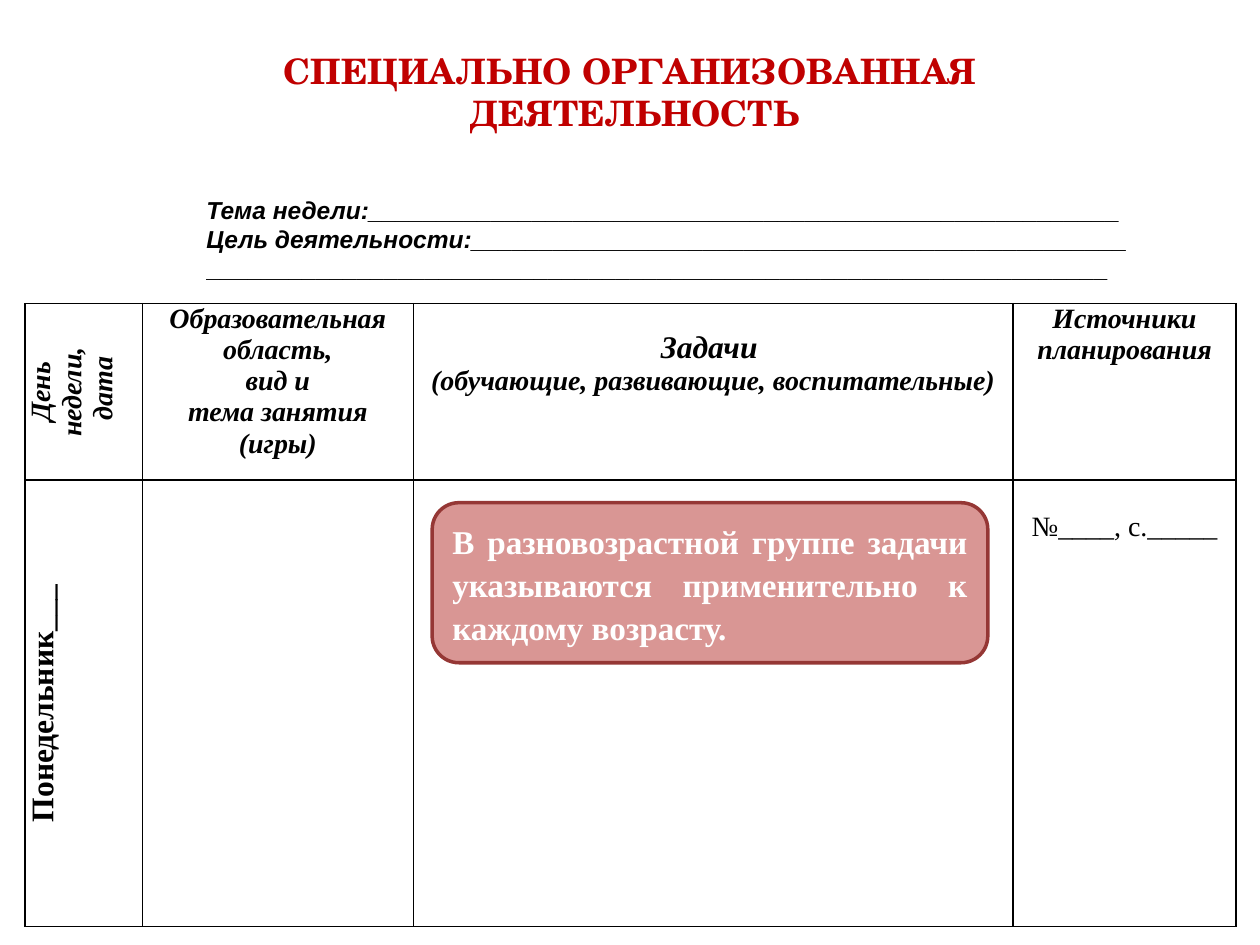
from dataclasses import dataclass

import pptx
import pptx.dml.color
import pptx.enum.shapes
import pptx.enum.text
import pptx.oxml
import pptx.oxml.ns
import pptx.util

Inches, Pt = pptx.util.Inches, pptx.util.Pt
RGBColor = pptx.dml.color.RGBColor
Align, Anchor = pptx.enum.text.PP_ALIGN, pptx.enum.text.MSO_ANCHOR

BLACK = RGBColor(0x00, 0x00, 0x00)
WHITE = RGBColor(0xFF, 0xFF, 0xFF)
RED = RGBColor(0xC0, 0x00, 0x00)
ROSE = RGBColor(0xD9, 0x96, 0x94)
MAROON = RGBColor(0x95, 0x37, 0x35)

SERIF = "Times New Roman"
COLUMNS = (0.93, 2.15, 4.76, 1.77)
ROWS = (1.4, 3.54)


@dataclass
class Line:
    text: str
    size: float = 16
    bold: bool = True
    italic: bool = True
    align: Align = Align.CENTER
    font: str = SERIF
    color: RGBColor = BLACK


@dataclass
class Cell:
    row: int
    column: int
    lines: list[Line]
    vertical: bool = False


CELLS = [
    Cell(0, 0, [Line("День недели,"), Line(" дата")], vertical=True),
    Cell(0, 1, [Line("Образовательная область,"), Line("вид и"),
                Line("тема занятия (игры)")]),
    Cell(0, 2, [Line("\u00a0", 14), Line("Задачи ", 18),
                Line("(обучающие, развивающие, воспитательные)")]),
    Cell(0, 3, [Line("Источники"), Line("планирования"), Line(" ", 14)]),
    Cell(1, 0, [Line("Понедельник___", 18, italic=False)], vertical=True),
    Cell(1, 3, [Line("\u00a0", bold=False, italic=False, align=Align.LEFT),
                Line("№____, с._____", bold=False, italic=False)]),
]

THEME_LINES = [
    Line("Тема недели:" + "_" * 55, 14, align=Align.LEFT, font="Arial"),
    Line("Цель деятельности:" + "_" * 48, 14, align=Align.LEFT, font="Arial"),
    Line("_" * 66, 14, italic=False, align=Align.LEFT, font="Arial"),
]


def write_lines(tf: pptx.text.text.TextFrame, lines: list[Line]) -> None:
    for i, line in enumerate(lines):
        p = tf.paragraphs[0] if i == 0 else tf.add_paragraph()
        p.text = line.text
        p.alignment = line.align
        for r in p.runs:
            style = {"size": Pt(line.size), "name": line.font,
                     "bold": line.bold, "italic": line.italic}
            for key, value in style.items():
                setattr(r.font, key, value)
            r.font.color.rgb = line.color


def place(sp, left: float, top: float, width: float, height: float) -> None:
    box = {"left": left, "top": top, "width": width, "height": height}
    for key, value in box.items():
        setattr(sp, key, Inches(value))


def add_borders(cell) -> None:
    """Draw 1 pt black lines on all sides, ahead of the cell's fill."""
    tc_pr = cell._tc.get_or_add_tcPr()
    for i, side in enumerate(("lnL", "lnR", "lnT", "lnB")):
        tc_pr.insert(i, pptx.oxml.parse_xml(
            f'<a:{side} {pptx.oxml.ns.nsdecls("a")} w="{Pt(1)}"><a:solidFill>'
            f'<a:srgbClr val="{BLACK}"/></a:solidFill></a:{side}>'))


def add_plan_table(slide) -> None:
    table = slide.shapes.add_table(
        len(ROWS), len(COLUMNS), Inches(0.2), Inches(2.41),
        Inches(sum(COLUMNS)), Inches(sum(ROWS))).table
    table.first_row = table.horz_banding = False
    for column, width in zip(table.columns, COLUMNS):
        column.width = Inches(width)
    for row, height in zip(table.rows, ROWS):
        row.height = Inches(height)
    margins = {"margin_left": 0.04, "margin_right": 0.04,
               "margin_top": 0, "margin_bottom": 0}
    for cell in table.iter_cells():
        for key, value in margins.items():
            setattr(cell, key, Inches(value))
        cell.fill.background()
        add_borders(cell)
    for item in CELLS:
        cell = table.cell(item.row, item.column)
        write_lines(cell.text_frame, item.lines)
        if item.vertical:
            cell.vertical_anchor = Anchor.MIDDLE
            cell._tc.get_or_add_tcPr().set("vert", "vert270")
            for p in cell.text_frame.paragraphs:
                for side in ("marL", "marR"):
                    p._p.get_or_add_pPr().set(side, str(Inches(0.08)))


def add_note(slide) -> None:
    sp = slide.shapes.add_shape(
        pptx.enum.shapes.MSO_SHAPE.ROUNDED_RECTANGLE,
        Inches(3.43), Inches(3.99), Inches(4.41), Inches(1.27))
    sp.shadow.inherit = False
    sp.fill.solid()
    sp.fill.fore_color.rgb = ROSE
    sp.line.color.rgb = MAROON
    sp.line.width = Pt(2)
    tf = sp.text_frame
    tf.word_wrap = True
    tf.vertical_anchor = Anchor.MIDDLE
    write_lines(tf, [Line(
        "В разновозрастной группе задачи указываются применительно "
        "к каждому возрасту.", 19, italic=False, align=Align.JUSTIFY,
        color=WHITE)])
    tf.paragraphs[0].line_spacing = 1.08


def main() -> None:
    prs = pptx.Presentation()
    prs.slide_width, prs.slide_height = Inches(10), Inches(7.5)
    slide = prs.slides.add_slide(prs.slide_layouts[5])

    title = slide.shapes.title
    place(title, 0.04, 0, 10, 1.11)
    title.text_frame.auto_size = pptx.enum.text.MSO_AUTO_SIZE.NONE
    title.text_frame.vertical_anchor = Anchor.BOTTOM
    write_lines(title.text_frame, [Line(
        "СПЕЦИАЛЬНО ОРГАНИЗОВАННАЯ \vДЕЯТЕЛЬНОСТЬ", 20, italic=False,
        font="TeX Gyre Schola", color=RED)])

    add_plan_table(slide)

    theme = slide.shapes.add_textbox(0, 0, 0, 0)
    place(theme, 1.54, 1.49, 8.62, 0.81)
    theme.text_frame.word_wrap = True
    theme.text_frame.vertical_anchor = Anchor.MIDDLE
    write_lines(theme.text_frame, THEME_LINES)

    add_note(slide)
    prs.save("out.pptx")


if __name__ == "__main__":
    main()
